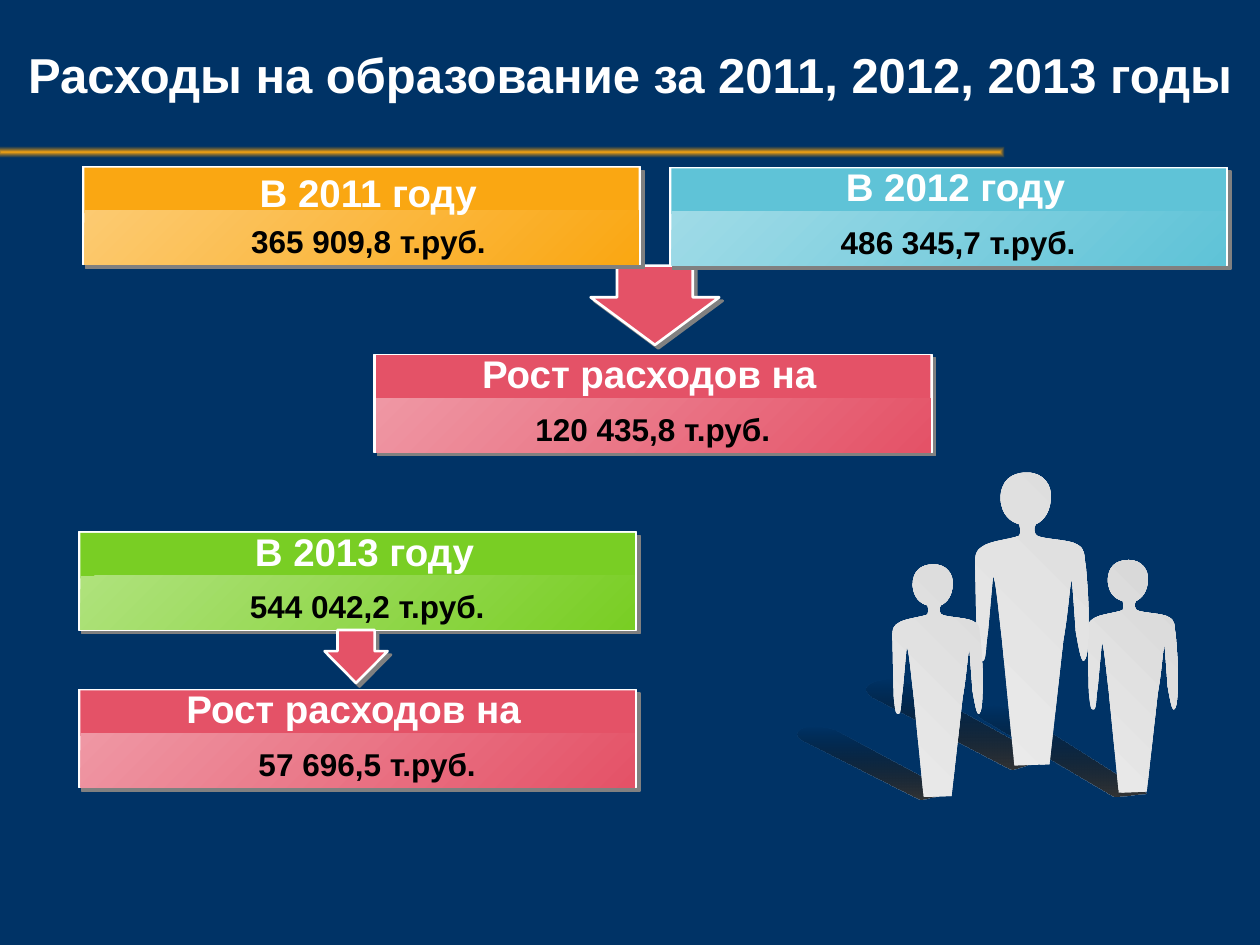
import pptx
import pptx.dml.color
import pptx.enum.shapes
import pptx.enum.text
import pptx.oxml
import pptx.oxml.ns
import pptx.util

Pt = pptx.util.Pt
SHAPE = pptx.enum.shapes.MSO_SHAPE
ANCHOR = pptx.enum.text.MSO_ANCHOR
CENTER = pptx.enum.text.PP_ALIGN.CENTER
NS = pptx.oxml.ns.nsdecls("a")
qn = pptx.oxml.ns.qn

RED = ("E45267", "EF97A4")
ORANGE = ("FAA712", "FCCA71")
BLUE = ("5FC3D7", "9FDBE7")
GREEN = ("79CE24", "AFE27C")

PERSON = [
    (50, 41), (57, 38, 62, 30, 62, 20), (63, 10, 56, 0, 43, 0),
    (30, 0, 22, 7, 22, 21), (23, 34, 30, 39, 37, 41), (38, 45, 38, 48, 37, 50),
    (30, 53, 13, 54, 7, 59), (0, 63, 2, 71, 2, 83), (3, 131),
    (4, 142, 5, 150, 7, 149), (11, 151, 10, 137, 12, 126), (16, 82),
    (18, 83, 20, 106, 23, 131), (33, 232), (61, 231), (72, 133),
    (77, 104, 77, 86, 79, 85), (82, 126), (84, 137, 86, 149, 88, 149),
    (91, 149, 92, 137, 92, 124), (93, 112, 91, 86, 90, 75),
    (88, 64, 90, 61, 83, 57), (77, 53, 56, 53, 51, 50), (49, 49, 48, 44, 50, 41),
]
RIGHT_SHADOW = [(146, 72), (120, 75), (16, 14), (0, 2, 15, 4, 20, 3), (25, 3, 28, 0, 49, 11)]
MIDDLE_SHADOW = [(153, 64), (125, 73), (15, 16), (0, 4, 25, 1, 33, 1), (38, 0, 38, 2, 60, 13)]
LEFT_SHADOW = [(130, 56), (105, 62), (11, 15), (0, 6, 19, 0, 38, 7)]


def color(value):
    return pptx.dml.color.RGBColor.from_string(value)


def style(sp, fill, line=None, width=0.75):
    sp.shadow.inherit = False
    sp.fill.solid()
    sp.fill.fore_color.rgb = color(fill)
    if line:
        sp.line.color.rgb = color(line)
        sp.line.width = Pt(width)
    else:
        sp.line.fill.background()


def gradient(sp, start, end, direction, start_alpha=100, end_alpha=100):
    sp.fill.gradient()
    old = sp._element.spPr.find(qn("a:gradFill"))
    stops = "".join(
        f'<a:gs pos="{pos}"><a:srgbClr val="{value}"><a:alpha val="{alpha * 1000}"/></a:srgbClr></a:gs>'
        for pos, value, alpha in ((0, start, start_alpha), (100000, end, end_alpha)))
    if direction == "center":
        path = ('<a:path path="shape"><a:fillToRect l="50000" t="50000" '
                'r="50000" b="50000"/></a:path>')
    else:
        path = f'<a:lin ang="{direction * 60000}" scaled="1"/>'
    new = pptx.oxml.parse_xml(
        f'<a:gradFill {NS} rotWithShape="1"><a:gsLst>{stops}</a:gsLst>{path}</a:gradFill>')
    old.getparent().replace(old, new)


def drop_shadow(sp):
    sp._element.spPr.find(qn("a:effectLst")).append(pptx.oxml.parse_xml(
        f'<a:outerShdw {NS} dist="35921" dir="2700000" algn="ctr" rotWithShape="0">'
        '<a:srgbClr val="808080"/></a:outerShdw>'))


def add_box(shapes, kind, x, y, w, h, *look):
    sp = shapes.add_shape(kind, Pt(x), Pt(y), Pt(w), Pt(h))
    style(sp, *look)
    return sp


def format_text(tf, text, size, value):
    tf.text = text
    tf.word_wrap = True
    p = tf.paragraphs[0]
    p.alignment = CENTER
    f = p.runs[0].font
    f.name, f.size, f.bold = "Arial", Pt(size), True
    f.color.rgb = color(value)


def add_label(s, center, y, w, h, text, size, value):
    tb = s.shapes.add_textbox(Pt(center - w / 2), Pt(y), Pt(w), Pt(h))
    format_text(tb.text_frame, text, size, value)


def title(s, x, y, w, h):
    bar = add_box(s.shapes, SHAPE.RECTANGLE, x - 2, y + 83.8, 576, 6, "FAA712")
    gradient(bar, "FAA712", "B3770D", "center", 100, 0)
    t = s.shapes.title
    t.left, t.top, t.width, t.height = Pt(x), Pt(y), Pt(w), Pt(h)
    format_text(t.text_frame, "Расходы на образование за 2011, 2012, 2013 годы", 28, "FFFFFF")
    t.text_frame.vertical_anchor = ANCHOR.MIDDLE


def card(s, x, y, colors, heading, amount, head_center=163.5, amount_center=165,
         head_width=191.5, head_dy=-6):
    strong, light = colors
    shapes = s.shapes.add_group_shape().shapes
    drop_shadow(add_box(shapes, SHAPE.RECTANGLE, x, y, 319, 56, "FFFFFF", "FFFFFF"))
    add_box(shapes, SHAPE.RECTANGLE, x + 1.2, y + 0.5, 316.8, 26, strong)
    body = add_box(shapes, SHAPE.RECTANGLE, x + 1.2, y + 25, 316.8, 31, strong)
    gradient(body, light, strong, 45)
    add_label(s, x + amount_center, y + 28, 259, 29, amount, 18, "000000")
    add_label(s, x + head_center, y + head_dy, head_width, 34, heading, 22, "FFFFFF")


def down_arrow(s, x, y, w, h):
    sp = add_box(s.shapes, SHAPE.DOWN_ARROW, x, y, w, h, "E45267", "FFFFFF", 1.5)
    sp.adjustments[0], sp.adjustments[1] = 0.589, 0.6
    drop_shadow(sp)


def path_step(part, first):
    points = "".join(f'<a:pt x="{px}" y="{py}"/>' for px, py in zip(part[::2], part[1::2]))
    tag = "moveTo" if first else "cubicBezTo" if len(part) == 6 else "lnTo"
    return f"<a:{tag}>{points}</a:{tag}>"


def add_outline(shapes, outline, x, y, w, h, fill):
    ends = [part[-2:] for part in outline]
    builder = shapes.build_freeform(*ends[0])
    builder.add_line_segments(ends[1:], close=True)
    sp = builder.convert_to_shape()
    right, bottom = (max(end[i] for end in ends) for i in (0, 1))
    steps = "".join(path_step(part, i == 0) for i, part in enumerate(outline))
    old = sp._element.spPr.find(".//" + qn("a:path"))
    old.getparent().replace(old, pptx.oxml.parse_xml(
        f'<a:path {NS} w="{right}" h="{bottom}">{steps}<a:close/></a:path>'))
    sp.left, sp.top, sp.width, sp.height = Pt(x), Pt(y), Pt(w), Pt(h)
    style(sp, fill)
    return sp


def people(s, x, y):
    shapes = s.shapes.add_group_shape().shapes
    for outline, dx, dy, w, h in ((RIGHT_SHADOW, 100, 131, 105, 54),
                                  (MIDDLE_SHADOW, 38, 117.5, 110, 52.5),
                                  (LEFT_SHADOW, 0, 142.5, 93.5, 44.5)):
        sp = add_outline(shapes, outline, x + dx, y + dy, w, h, "333333")
        gradient(sp, "000000", "333333", 90, 0)
    for dx, dy, w, h, shade in ((170.5, 50, 52.5, 133, "D7D7D7"),
                                (106, 0, 66, 167.5, "DEDEDE"),
                                (59, 52.5, 52.5, 133, "DBDBDB")):
        sp = add_outline(shapes, PERSON, x + dx, y + dy, w, h, shade)
        gradient(sp, "EAEAEA", shade, 315)


def main():
    prs = pptx.Presentation()
    prs.slide_width, prs.slide_height = Pt(720), Pt(540)
    s = prs.slides.add_slide(prs.slide_layouts[5])
    s.background.fill.solid()
    s.background.fill.fore_color.rgb = color("003366")
    title(s, 0, 0, 720, 84)
    down_arrow(s, 337.5, 151.8, 73.5, 45.3)
    growth = "Рост расходов на"
    card(s, 213.7, 202.5, RED, growth, "120 435,8 т.руб.", 157.3, 159.3, 230)
    card(s, 382.5, 95.7, BLUE, "В 2012 году", "486 345,7 т.руб.")
    card(s, 47, 95.3, ORANGE, "В 2011 году", "365 909,8 т.руб.", 163.5, 163.5, head_dy=-2)
    card(s, 44.8, 304, GREEN, "В 2013 году", "544 042,2 т.руб.")
    down_arrow(s, 185.5, 360, 36, 30.3)
    card(s, 44.8, 394, RED, growth, "57 696,5 т.руб.", 157.3, head_width=230)
    people(s, 450, 270)
    prs.save("out.pptx")


if __name__ == "__main__":
    main()
